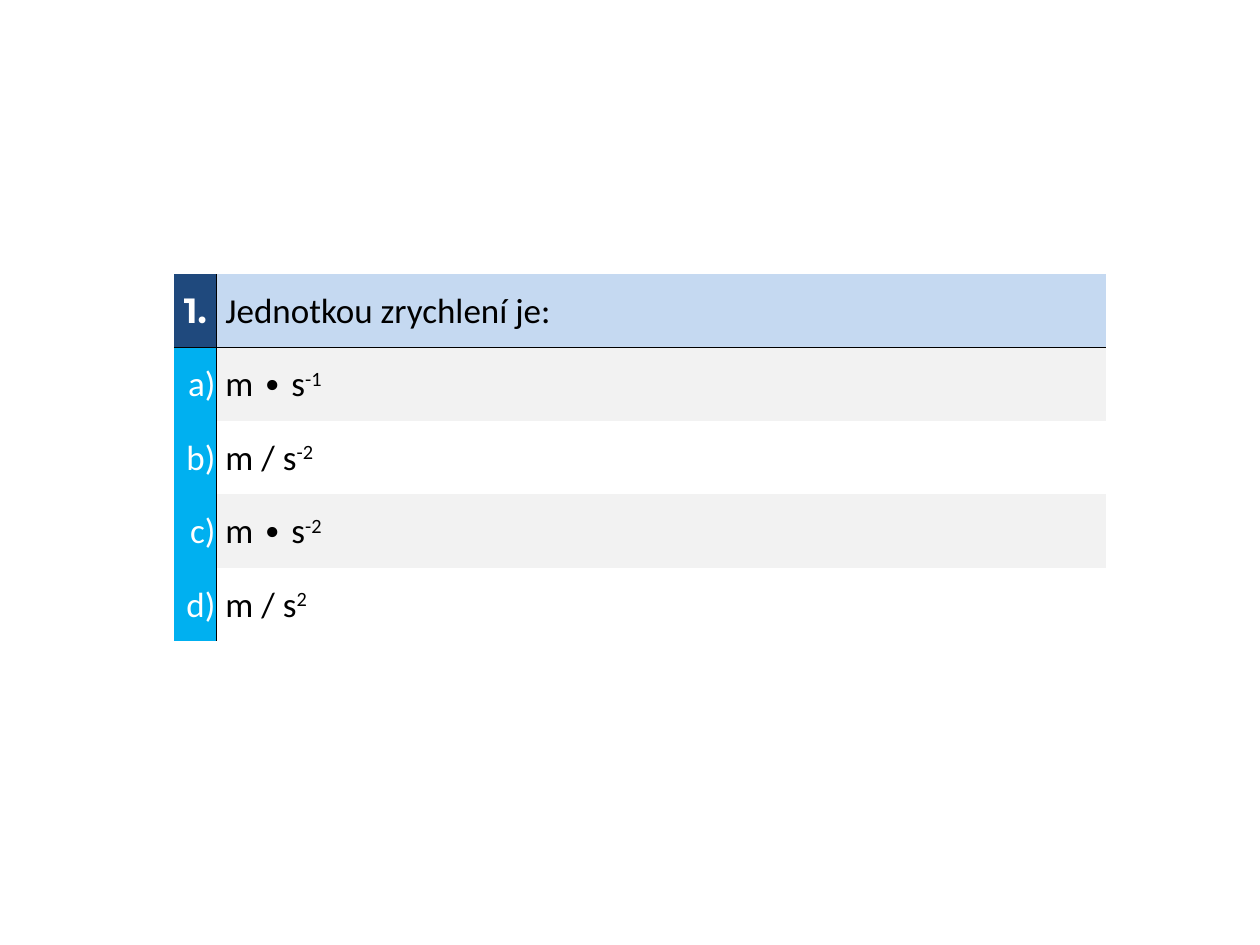
from lxml import etree
from pptx import Presentation
from pptx.dml.color import RGBColor
from pptx.enum.text import MSO_ANCHOR, PP_ALIGN
from pptx.oxml.ns import qn
from pptx.util import Inches, Pt

LEFT, CENTER, RIGHT = PP_ALIGN.LEFT, PP_ALIGN.CENTER, PP_ALIGN.RIGHT
MIDDLE = MSO_ANCHOR.MIDDLE
BLANK_LAYOUT = 6
WIDTH, HEIGHT = 10, 7.5

BLACK, WHITE = "000000", "FFFFFF"
NAVY, SKY, PALE_BLUE, PALE_GREY = "1F497D", "00B0F0", "C5D9F1", "F2F2F2"

QUESTION = ("1.", "Jednotkou zrychlení je:")
ANSWERS = [
    ("a)", "m ∙ s", "-1"),
    ("b)", "m / s", "-2"),
    ("c)", "m ∙ s", "-2"),
    ("d)", "m / s", "2"),
]


def color(value):
    return RGBColor.from_string(value)


def add_text(paragraph, text, size=20, font="Calibri", ink=BLACK, bold=False, raised=False):
    run = paragraph.add_run()
    run.text = text
    run.font.size = Pt(size)
    run.font.name = font
    run.font.bold = bold
    run.font.color.rgb = color(ink)
    if raised:
        run.font._element.set("baseline", "30000")


class Quiz:
    def __init__(self, slide):
        self.slide = slide
        self.rule_width = Pt(0.5)

    def table(self, left, top, columns, row_height, rows):
        frame = self.slide.shapes.add_table(
            rows, len(columns), Inches(left * WIDTH), Inches(top * HEIGHT),
            Inches(sum(columns) * WIDTH), Inches(rows * row_height * HEIGHT))
        grid = frame.table
        grid.first_row = grid.horz_banding = False
        for column, share in zip(grid.columns, columns):
            column.width = Inches(share * WIDTH)
        for row in grid.rows:
            row.height = Inches(row_height * HEIGHT)
        return grid

    def borders(self, cell, ruled):
        properties = cell._tc.get_or_add_tcPr()
        for side in "LRTB":
            line = etree.SubElement(properties, qn(f"a:ln{side}"), w=str(self.rule_width))
            if side in ruled:
                fill = etree.SubElement(line, qn("a:solidFill"))
                etree.SubElement(fill, qn("a:srgbClr"), val=BLACK)
            else:
                etree.SubElement(line, qn("a:noFill"))

    def cell(self, cell, ruled, fill=None, align=LEFT, indent=0.01):
        self.borders(cell, ruled)
        if fill:
            cell.fill.solid()
            cell.fill.fore_color.rgb = color(fill)
        else:
            cell.fill.background()
        cell.vertical_anchor = MIDDLE
        cell.margin_left = Inches(indent)
        cell.margin_right = cell.margin_top = Inches(0.01)
        cell.margin_bottom = 0
        paragraph = cell.text_frame.paragraphs[0]
        paragraph.alignment = align
        return paragraph

    def question(self, grid, number, wording):
        label = self.cell(grid.cell(0, 0), "RB", NAVY, CENTER)
        add_text(label, number, font="Montserrat", ink=WHITE, bold=True)
        add_text(self.cell(grid.cell(0, 1), "LB", PALE_BLUE, indent=0.07), wording)

    def answer(self, grid, row, letter, unit, exponent):
        top_rule = "T" if row == 1 else ""
        stripe = PALE_GREY if row % 2 else None
        label = self.cell(grid.cell(row, 0), "R" + top_rule, SKY, RIGHT)
        add_text(label, letter, ink=WHITE)
        formula = self.cell(grid.cell(row, 1), "L" + top_rule, stripe, indent=0.07)
        add_text(formula, unit)
        add_text(formula, exponent, raised=True)


def main():
    deck = Presentation()
    deck.slide_width, deck.slide_height = Inches(WIDTH), Inches(HEIGHT)
    quiz = Quiz(deck.slides.add_slide(deck.slide_layouts[BLANK_LAYOUT]))
    grid = quiz.table(0.138, 0.29, (0.034, 0.706), 0.0777, 1 + len(ANSWERS))
    quiz.question(grid, *QUESTION)
    for row, answer in enumerate(ANSWERS, start=1):
        quiz.answer(grid, row, *answer)
    deck.save("out.pptx")


if __name__ == "__main__":
    main()
